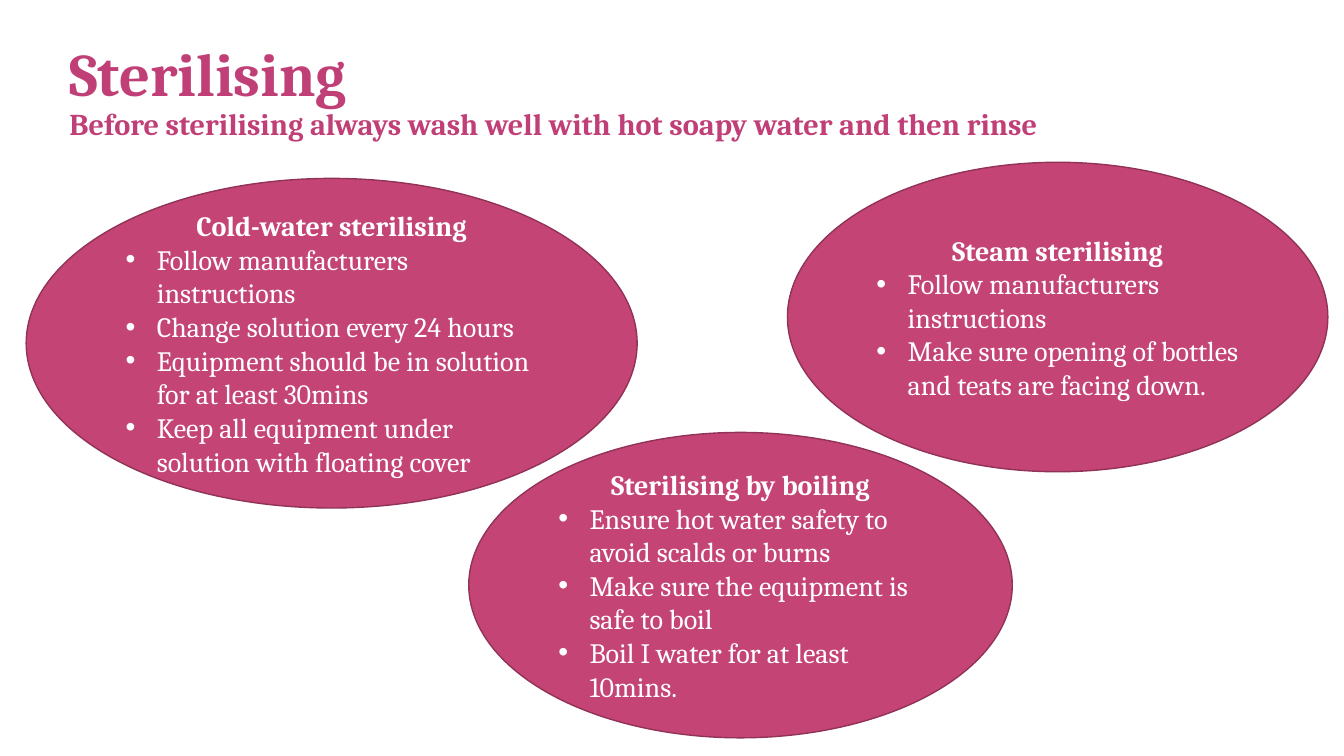
from dataclasses import dataclass

from lxml.etree import SubElement
from pptx import Presentation
from pptx.dml.color import RGBColor as RGB
from pptx.enum.shapes import MSO_SHAPE as Shape
from pptx.enum.text import MSO_ANCHOR as Anchor, PP_ALIGN as Align
from pptx.oxml.ns import qn
from pptx.util import Inches, Pt


@dataclass(frozen=True)
class Theme:
    font: str = "Cambria"
    heading: RGB = RGB(0xC1, 0x3F, 0x77)
    fill: RGB = RGB(0xC4, 0x44, 0x75)
    outline: RGB = RGB(0x91, 0x32, 0x57)
    on_fill: RGB = RGB(0xFF, 0xFF, 0xFF)
    title_size: float = 43.2
    subtitle_size: float = 21.6
    body_size: float = 20
    indent: float = 0.31


class SlideBuilder:
    """Places elements by percentages of the slide's width and height."""

    def __init__(self, prs, theme):
        self.prs, self.theme = prs, theme
        self.slide = prs.slides.add_slide(prs.slide_layouts[6])

    def box(self, left, top, width, height):
        w, h = self.prs.slide_width, self.prs.slide_height
        return [int(share * side / 100) for share, side in
                zip((left, top, width, height), (w, h, w, h))]

    def run(self, p, text, size, color, bold=False):
        r = p.add_run()
        r.text = text
        r.font.name = self.theme.font
        r.font.size = Pt(size)
        r.font.bold = bold
        r.font.color.rgb = color

    def bullet(self, p):
        pPr = p._p.get_or_add_pPr()
        indent = Inches(self.theme.indent)
        pPr.set("marL", str(indent))
        pPr.set("indent", str(-indent))
        SubElement(pPr, qn("a:buFont")).set("typeface", "Arial")
        SubElement(pPr, qn("a:buChar")).set("char", "•")

    def title(self, place, heading, subheading):
        t = self.theme
        tf = self.slide.shapes.add_textbox(*self.box(*place)).text_frame
        tf.word_wrap = True
        tf.vertical_anchor = Anchor.BOTTOM
        p = tf.paragraphs[0]
        p.line_spacing = 0.9
        self.run(p, heading, t.title_size, t.heading, bold=True)
        p.add_line_break()
        self.run(p, subheading, t.subtitle_size, t.heading, bold=True)

    def method_oval(self, place, heading, steps):
        t = self.theme
        sp = self.slide.shapes.add_shape(Shape.OVAL, *self.box(*place))
        sp.shadow.inherit = False
        sp.fill.solid()
        sp.fill.fore_color.rgb = t.fill
        sp.line.color.rgb = t.outline
        sp.line.width = Pt(1)

        tf = sp.text_frame
        tf.word_wrap = True
        tf.vertical_anchor = Anchor.MIDDLE
        p = tf.paragraphs[0]
        p.alignment = Align.CENTER
        self.run(p, heading, t.body_size, t.on_fill, bold=True)
        for step in steps:
            p = tf.add_paragraph()
            p.alignment = Align.LEFT
            self.bullet(p)
            self.run(p, step, t.body_size, t.on_fill)


# Position (percent), heading and steps of each sterilising method
METHODS = [
    ((1.95, 23.6, 45.46, 43.6), "Cold-water sterilising", [
        "Follow manufacturers instructions",
        "Change solution every 24 hours",
        "Equipment should be in solution for at least 30mins",
        "Keep all equipment under solution with floating cover",
    ]),
    ((58.59, 21.47, 40.21, 40.93), "Steam sterilising", [
        "Follow manufacturers instructions",
        "Make sure opening of bottles and teats are facing down.",
    ]),
    ((34.88, 57.2, 40.44, 40.4), "Sterilising by boiling", [
        "Ensure hot water safety to avoid scalds or burns",
        "Make sure the equipment is safe to boil",
        "Boil I water for at least 10mins.",
    ]),
]


def main():
    prs = Presentation()
    prs.slide_width, prs.slide_height = Inches(13.33), Inches(7.5)
    builder = SlideBuilder(prs, Theme())

    # Heading
    builder.title((4.43, 4.67, 89.42, 14.8), "Sterilising",
                  "Before sterilising always wash well with hot soapy water and then rinse")

    # Sterilising methods
    for place, heading, steps in METHODS:
        builder.method_oval(place, heading, steps)

    prs.save("out.pptx")


if __name__ == "__main__":
    main()
